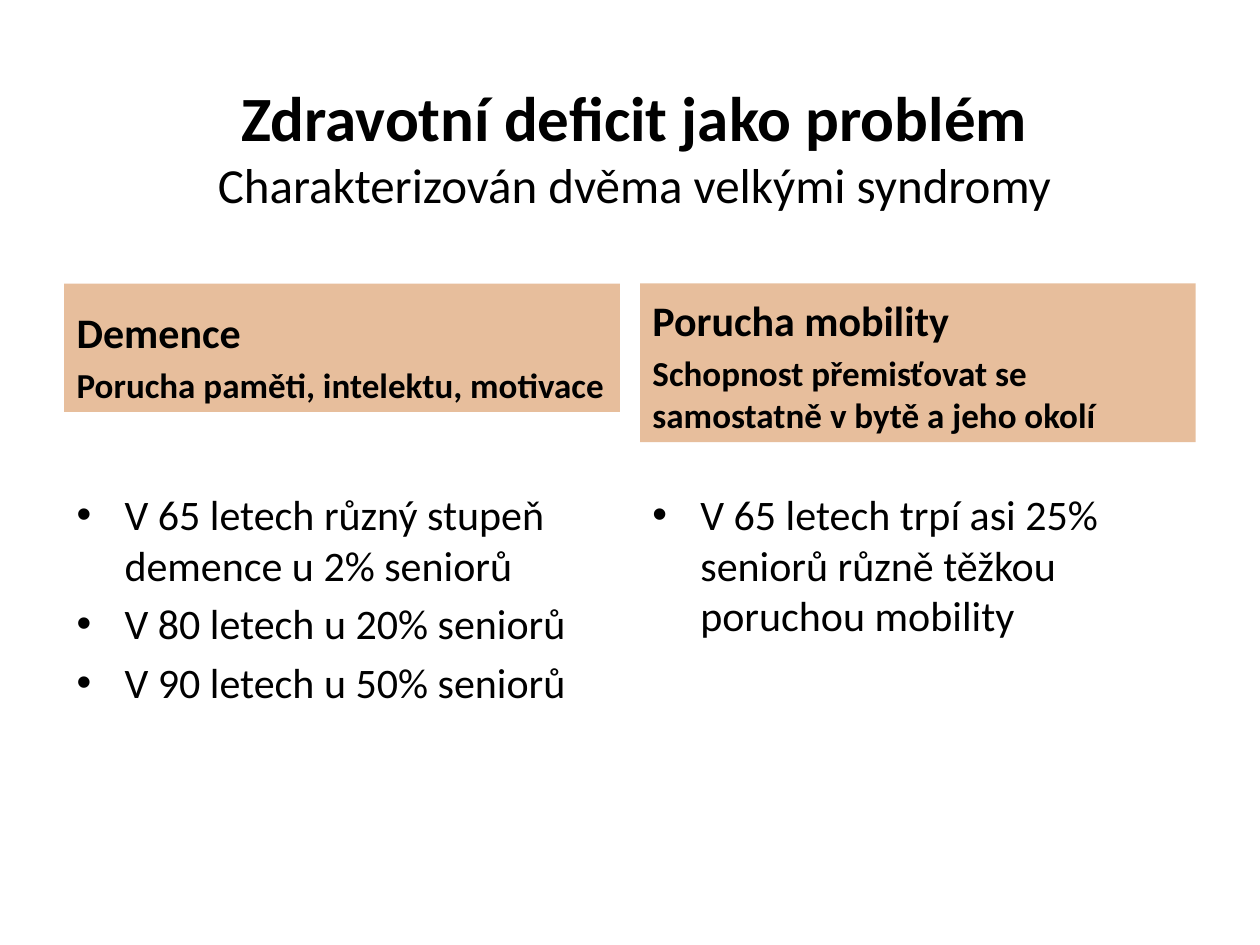
from typing import NamedTuple

from lxml.etree import SubElement
from pptx import Presentation
from pptx.dml.color import RGBColor
from pptx.enum.shapes import MSO_SHAPE
from pptx.enum.text import MSO_ANCHOR, PP_ALIGN
from pptx.oxml.ns import qn
from pptx.util import Emu, Pt

PX = 9144
FONT = "Calibri"
BLACK = RGBColor(0x00, 0x00, 0x00)
ORANGE = RGBColor(0xC3, 0x5D, 0x09)


class Run(NamedTuple):
    text: str
    size: int
    bold: bool = False


class Column(NamedTuple):
    left: int
    high: int
    head: str
    note: str
    items: list[str]


COLUMNS = [
    Column(51, 102, "Demence", "Porucha paměti, intelektu, motivace", [
        "V 65 letech různý stupeň demence u 2% seniorů",
        "V 80 letech u 20% seniorů",
        "V 90 letech u 50% seniorů",
    ]),
    Column(508, 126, "Porucha mobility",
           "Schopnost přemisťovat se samostatně v bytě a jeho okolí",
           ["V 65 letech trpí asi 25% seniorů různě těžkou poruchou mobility"]),
]
WIDE, HEAD_TOP, LIST_TOP, LIST_HIGH, INDENT = 441, 225, 383, 287, 38


def px(value: int) -> Emu:
    return Emu(value * PX)


def add_bullet(para) -> None:
    props = para._p.get_or_add_pPr()
    props.set("marL", str(px(INDENT)))
    props.set("indent", str(px(-INDENT)))
    SubElement(props, qn("a:buFont"), typeface="Arial")
    SubElement(props, qn("a:buChar"), char="•")


def write(shape, paras: list[list[Run]], *, align=PP_ALIGN.LEFT,
          anchor=MSO_ANCHOR.TOP, gap: float = 0, bullet: bool = False) -> None:
    frame = shape.text_frame
    frame.word_wrap = True
    frame.vertical_anchor = anchor
    for i, runs in enumerate(paras):
        para = frame.add_paragraph() if i else frame.paragraphs[0]
        para.alignment = align
        para.space_before = Pt(gap * runs[0].size)
        if bullet:
            add_bullet(para)
        for j, item in enumerate(runs):
            if j:
                para.add_line_break()
            run = para.add_run()
            run.text = item.text
            font = run.font
            font.name, font.size, font.bold = FONT, Pt(item.size), item.bold
            font.color.rgb = BLACK


def add_box(slide, left: int, top: int, wide: int, high: int):
    return slide.shapes.add_textbox(px(left), px(top), px(wide), px(high))


def add_band(slide, left: int, top: int, wide: int, high: int):
    band = slide.shapes.add_shape(
        MSO_SHAPE.RECTANGLE, px(left), px(top), px(wide), px(high))
    band.shadow.inherit = False
    band.fill.solid()
    band.fill.fore_color.rgb = ORANGE
    color = band._element.spPr.find(qn("a:solidFill"))[0]
    SubElement(color, qn("a:alpha"), val="40000")
    band.line.fill.background()
    return band


def add_column(slide, col: Column) -> None:
    band = add_band(slide, col.left, HEAD_TOP, WIDE, col.high)
    write(band, [[Run(col.head, 24, True)], [Run(col.note, 20, True)]],
          anchor=MSO_ANCHOR.BOTTOM, gap=0.2)
    box = add_box(slide, col.left, LIST_TOP, WIDE, LIST_HIGH)
    write(box, [[Run(item, 24)] for item in col.items], gap=0.2, bullet=True)


def main() -> None:
    deck = Presentation()
    deck.slide_width, deck.slide_height = px(1000), px(750)
    slide = deck.slides.add_slide(deck.slide_layouts[6])
    title = add_box(slide, 50, 30, 907, 172)
    write(title, [[Run("Zdravotní deficit jako problém", 36, True),
                   Run("Charakterizován dvěma velkými syndromy", 28)]],
          align=PP_ALIGN.CENTER, anchor=MSO_ANCHOR.MIDDLE)
    for col in COLUMNS:
        add_column(slide, col)
    deck.save("out.pptx")


if __name__ == "__main__":
    main()
